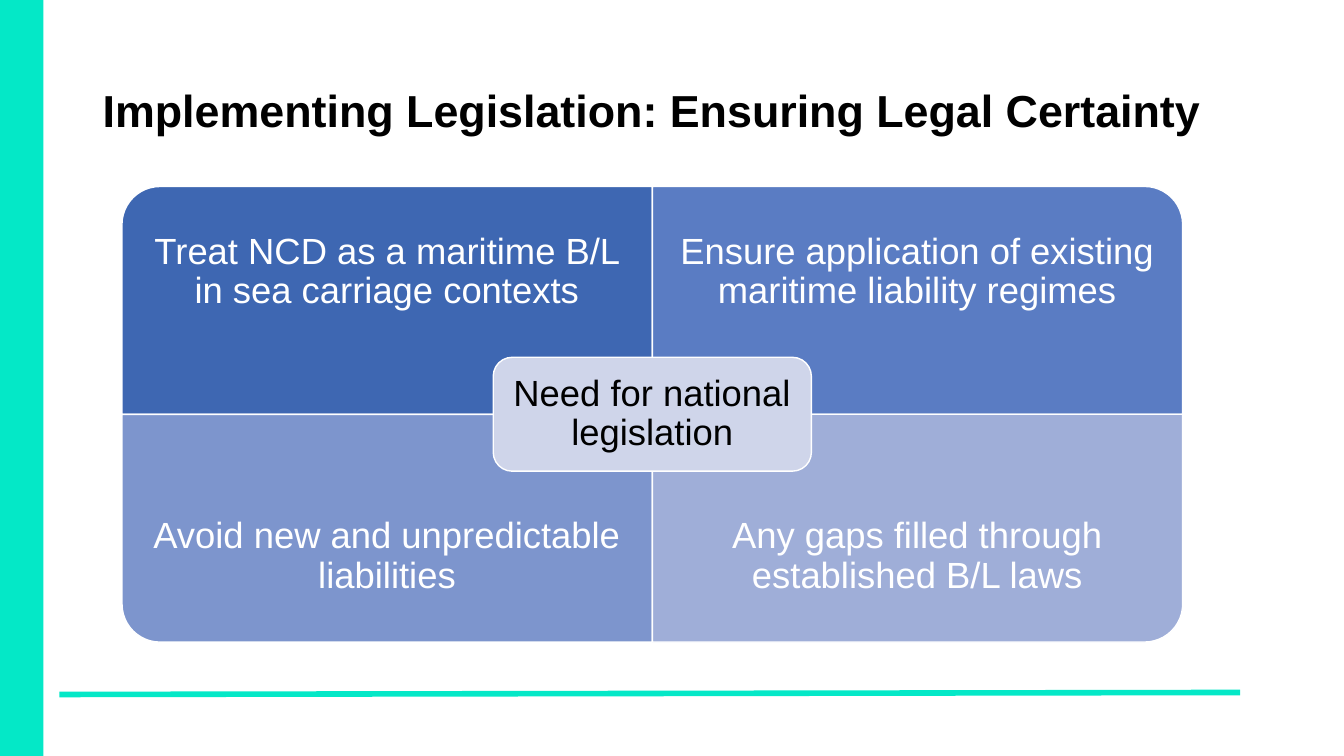
from lxml.etree import SubElement
from pptx import Presentation
from pptx.dml.color import RGBColor
from pptx.enum.shapes import MSO_CONNECTOR as CONNECTOR, MSO_SHAPE as SHAPE
from pptx.enum.text import MSO_ANCHOR as ANCHOR, PP_ALIGN as ALIGN
from pptx.oxml.ns import qn
from pptx.util import Inches, Pt

TITLE = "Implementing Legislation: Ensuring Legal Certainty"
CENTRE = "Need for national legislation"
QUADRANTS = [
    ("Treat NCD as a maritime B/L in sea carriage contexts", "3E67B2", 270),
    ("Ensure application of existing maritime liability regimes", "5A7CC3", 0),
    ("Avoid new and unpredictable liabilities", "7D95CD", 180),
    ("Any gaps filled through established B/L laws", "9FAED8", 90),
]
ACCENT, WHITE, BLACK, PALE = "04E8C7", "FFFFFF", "000000", "CFD5EA"
SLIDE_W, SLIDE_H = 13.33, 7.5
LEFT, TOP, CELL_W, CELL_H = 1.21, 1.85, 5.26, 2.26
LABEL_H = CELL_H * 0.75
HUB_W, HUB_H, HUB_PAD = CELL_W * 0.6, CELL_H * 0.5, 0.05


def colour(value):
    """Turn a hex string into a colour."""
    return RGBColor.from_string(value)


def add_block(slide, kind, box, fill, outline=None, turn=0):
    """Add a filled shape that covers the box after it is turned."""
    x, y, w, h = box
    if turn % 180:
        x, y, w, h = x + (w - h) / 2, y + (h - w) / 2, h, w
    block = slide.shapes.add_shape(kind, *map(Inches, (x, y, w, h)))
    block.rotation = turn
    block.shadow.inherit = False
    block.fill.solid()
    block.fill.fore_color.rgb = colour(fill)
    if outline:
        block.line.color.rgb = colour(outline)
        block.line.width = Pt(1)
    else:
        block.line.fill.background()


def add_label(slide, box, text, size, ink, inset=None, align=ALIGN.CENTER, bold=False):
    """Add wrapped text, centred vertically in the box."""
    frame = slide.shapes.add_textbox(*map(Inches, box)).text_frame
    frame.word_wrap = True
    frame.vertical_anchor = ANCHOR.MIDDLE
    if inset is not None:
        frame.margin_left = frame.margin_right = Inches(inset)
        frame.margin_top = frame.margin_bottom = Inches(inset)
    frame.text = text
    paragraph = frame.paragraphs[0]
    paragraph.alignment = align
    paragraph.line_spacing = 0.9
    font = paragraph.runs[0].font
    font.name, font.size, font.bold = "Arial", Pt(size), bold
    font.color.rgb = colour(ink)


def main():
    """Build the slide and save it."""
    deck = Presentation()
    deck.slide_width, deck.slide_height = Inches(SLIDE_W), Inches(SLIDE_H)
    slide = deck.slides.add_slide(deck.slide_layouts[6])

    footer_rule = slide.shapes.add_connector(
        CONNECTOR.STRAIGHT, *map(Inches, (12.3, 6.87, 0.59, 6.89)))
    footer_rule.line.color.rgb = colour(ACCENT)
    footer_rule.line.width = Pt(4)
    SubElement(footer_rule._element.spPr, qn("a:effectLst"))
    add_block(slide, SHAPE.RECTANGLE, (0, 0, 0.43, SLIDE_H), ACCENT)
    add_label(slide, (0.92, 0.4, 11.5, 1.45), TITLE, 32, BLACK, align=ALIGN.LEFT, bold=True)

    for index, (text, fill, turn) in enumerate(QUADRANTS):
        row, column = divmod(index, 2)
        x, y = LEFT + column * CELL_W, TOP + row * CELL_H
        add_block(slide, SHAPE.ROUND_1_RECTANGLE, (x, y, CELL_W, CELL_H), fill, WHITE, turn)
        label_y = y + row * (CELL_H - LABEL_H)
        add_label(slide, (x, label_y, CELL_W, LABEL_H), text, 26, WHITE, 0.2)

    hub_x, hub_y = LEFT + CELL_W - HUB_W / 2, TOP + CELL_H - HUB_H / 2
    add_block(slide, SHAPE.ROUNDED_RECTANGLE, (hub_x, hub_y, HUB_W, HUB_H), PALE, WHITE)
    hub_label = (hub_x + HUB_PAD, hub_y + HUB_PAD, HUB_W - 2 * HUB_PAD, HUB_H - 2 * HUB_PAD)
    add_label(slide, hub_label, CENTRE, 26, BLACK, 0.11)

    deck.save("out.pptx")


if __name__ == "__main__":
    main()
